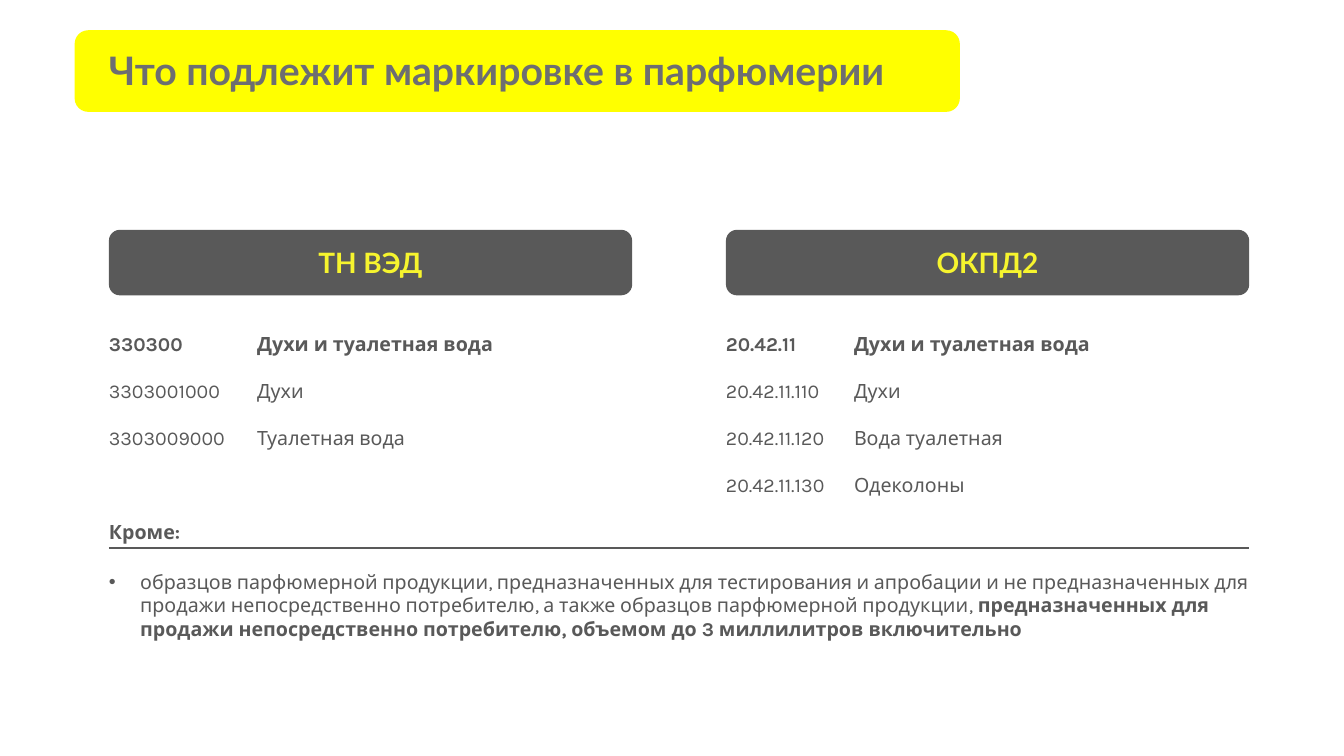
from lxml import etree
from pptx import Presentation
from pptx import util as u
from pptx.dml.color import RGBColor
from pptx.enum import shapes, text
from pptx.oxml import ns

WIDTH, HEIGHT = 13.33, 7.5
GREY, YELLOW = "595959", "F6F42E"

# Grid in inches: two equal columns, rows of one pitch
LEFT, RIGHT, COLUMN = 1.08, 7.2, 5.19
EDGE = RIGHT + COLUMN
HEADER_TOP, LIST_TOP = 2.28, 3.28
LINE = 16.8  # points
ROW = 2 * LINE / 72

BODY = {"name": "Karla", "size": u.Pt(14)}
HEADER = {"name": "Lato", "size": u.Pt(20), "bold": True}
TITLE = {"name": "Lato", "size": u.Pt(28), "bold": True}

# Header, left edge, offset of the names, rows of code and name
CLASSIFIERS = [
    ("ТН ВЭД", LEFT, 1.47, [
        ("330300", "Духи и туалетная вода"),
        ("3303001000", "Духи"),
        ("3303009000", "Туалетная вода")]),
    ("ОКПД2", RIGHT, 1.27, [
        ("20.42.11", "Духи и туалетная вода"),
        ("20.42.11.110", "Духи"),
        ("20.42.11.120", "Вода туалетная"),
        ("20.42.11.130", "Одеколоны")]),
]
EXCEPTION = [
    ("образцов парфюмерной продукции, предназначенных для тестирования и "
     "апробации и не предназначенных для продажи непосредственно потребителю, "
     "а также образцов парфюмерной продукции, ", False),
    ("предназначенных для продажи непосредственно потребителю, "
     "объемом до 3 миллилитров включительно", True),
]


def color(value):
    return RGBColor.from_string(value)


def inches(*values):
    return [u.Inches(value) for value in values]


def add_span(para, words, look, ink=GREY, **extra):
    span = para.add_run()
    span.text = words
    for key, value in {**look, **extra}.items():
        setattr(span.font, key, value)
    span.font.color.rgb = color(ink)


def add_bar(page, place, fill):
    bar = page.shapes.add_shape(
        shapes.MSO_SHAPE.ROUNDED_RECTANGLE, *inches(*place))
    bar.shadow.inherit = False
    bar.fill.solid()
    bar.fill.fore_color.rgb = color(fill)
    bar.line.fill.background()
    return bar


def add_box(page, left, top, width, height):
    frame = page.shapes.add_textbox(*inches(left, top, width, height)).text_frame
    settings = {"word_wrap": True, "margin_left": 0, "margin_right": 0,
                "margin_top": u.Inches(0.01), "margin_bottom": 0}
    for key, value in settings.items():
        setattr(frame, key, value)
    return frame


def add_list(page, left, width, entries):
    """A bold first line, then plain lines, one per grid row."""
    frame = add_box(page, left, LIST_TOP, width, len(entries) * ROW - LINE / 72)
    for index, entry in enumerate(entries):
        para = frame.add_paragraph() if index else frame.paragraphs[0]
        if index:
            para.space_before = u.Pt(LINE)
        add_span(para, entry, BODY, bold=index == 0)


def add_title(page, words):
    bar = add_bar(page, (0.74, 0.3, 8.78, 0.81), "FFFF00")
    title = page.shapes.title
    title._element.addprevious(bar._element)
    title.left, title.top, title.width, title.height = inches(0.98, 0.41, 8.47, 0.57)
    frame = title.text_frame
    frame.auto_size = text.MSO_AUTO_SIZE.NONE
    frame.vertical_anchor = text.MSO_ANCHOR.TOP
    para = frame.paragraphs[0]
    para.alignment = text.PP_ALIGN.LEFT
    add_span(para, words, TITLE, "6D6E71")


def add_classifier(page, name, left, offset, rows):
    frame = add_bar(page, (left, HEADER_TOP, COLUMN, 0.65), GREY).text_frame
    frame.vertical_anchor = text.MSO_ANCHOR.MIDDLE
    para = frame.paragraphs[0]
    para.alignment = text.PP_ALIGN.CENTER
    add_span(para, name, HEADER, YELLOW)
    codes, names = zip(*rows)
    add_list(page, left, offset, codes)
    add_list(page, left + offset, COLUMN - offset, names)


def add_rule(page, top):
    rule = page.shapes.add_connector(
        shapes.MSO_CONNECTOR.STRAIGHT, *inches(LEFT, top, EDGE, top))
    rule.line.color.rgb = color(GREY)
    rule.line.width = u.Pt(1.5)
    etree.SubElement(rule._element.spPr, ns.qn("a:effectLst"))


def add_bullet(para, indent):
    settings = para._p.get_or_add_pPr()
    settings.set("marL", str(u.Inches(indent)))
    settings.set("indent", str(-u.Inches(indent)))
    font = etree.SubElement(settings, ns.qn("a:buFont"))
    font.set("typeface", "Arial")
    etree.SubElement(settings, ns.qn("a:buChar")).set("char", "•")


def add_exception(page):
    label = add_box(page, LEFT, LIST_TOP + 4 * ROW, COLUMN, LINE / 72)
    add_span(label.paragraphs[0], "Кроме:", BODY, bold=True)
    add_rule(page, 5.44)
    para = add_box(page, LEFT, 5.64, EDGE - LEFT, 0.72).paragraphs[0]
    add_bullet(para, 0.31)
    for words, bold in EXCEPTION:
        add_span(para, words, BODY, bold=bold)


def main():
    deck = Presentation()
    deck.slide_width, deck.slide_height = inches(WIDTH, HEIGHT)
    page = deck.slides.add_slide(deck.slide_layouts.get_by_name("Title Only"))
    add_title(page, "Что подлежит маркировке в парфюмерии")
    for classifier in CLASSIFIERS:
        add_classifier(page, *classifier)
    add_exception(page)
    deck.save("out.pptx")


if __name__ == "__main__":
    main()
